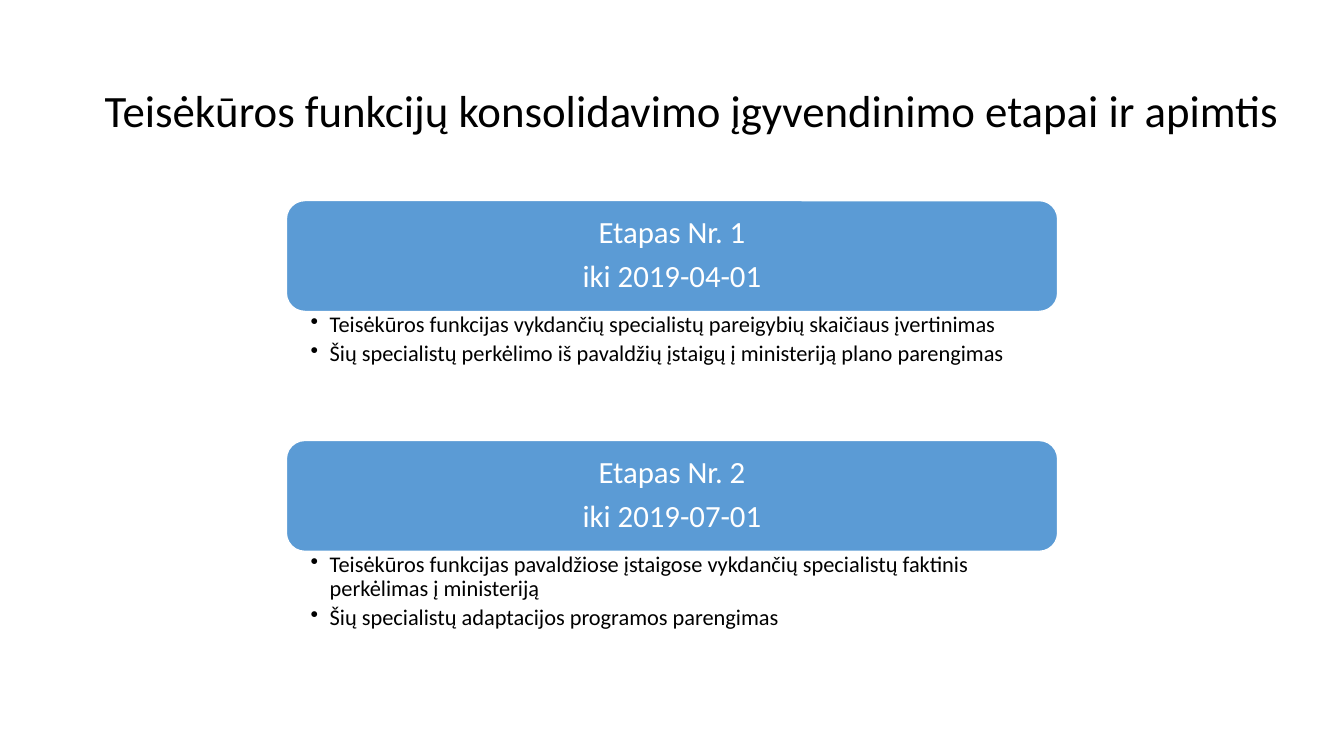
from pptx import Presentation
from pptx.dml.color import RGBColor
from pptx.enum.shapes import MSO_SHAPE as SHAPE
from pptx.enum.text import MSO_ANCHOR as ANCHOR, PP_ALIGN as ALIGN
from pptx.oxml.ns import qn
from pptx.util import Emu, Pt
from lxml.etree import SubElement

FONT = "Calibri"
COLORS = {"text": "000000", "stage": "5B9BD5", "light": "FFFFFF"}
LEFT, WIDTH, HEADER_H = 284, 765, 110
INDENT = 19

TITLE = "Teisėkūros funkcijų konsolidavimo įgyvendinimo etapai ir apimtis"
# top, heading lines, height of the task list, its alignment, tasks
STAGES = [
    (199, ["Etapas Nr. 1", "iki 2019-04-01"], 129, ALIGN.JUSTIFY, [
        "Teisėkūros funkcijas vykdančių specialistų pareigybių skaičiaus įvertinimas",
        "Šių specialistų perkėlimo iš pavaldžių įstaigų į ministeriją plano parengimas"]),
    (437, ["Etapas Nr. 2", "iki 2019-07-01"], 120, ALIGN.LEFT, [
        "Teisėkūros funkcijas pavaldžiose įstaigose vykdančių specialistų faktinis "
        "perkėlimas į ministeriją",
        "Šių specialistų adaptacijos programos parengimas"]),
]


def px(n):
    """Convert px to EMU, at 100 px to the inch."""
    return Emu(n * 9144)


def rgb(name):
    return RGBColor.from_string(COLORS[name])


def write(sp, lines, size, color, align, anchor, insets, gap=0):
    """Fill a shape with one paragraph per line; insets run left, top, right, bottom."""
    tf = sp.text_frame
    tf.word_wrap = True
    tf.vertical_anchor = anchor
    tf.margin_left, tf.margin_top, tf.margin_right, tf.margin_bottom = map(px, insets)
    tf.text = "\n".join(lines)
    for p in tf.paragraphs:
        p.alignment = align
        p.line_spacing = 0.9
        p.space_after = Pt(gap)
        font = p.runs[0].font
        font.name, font.size = FONT, Pt(size)
        font.color.rgb = rgb(color)


def add_bullet(p):
    pPr = p._p.get_or_add_pPr()
    pPr.set("marL", str(px(INDENT)))
    pPr.set("indent", str(px(-INDENT)))
    SubElement(pPr, qn("a:buChar")).set("char", "•")


def add_title(slide, text):
    sp = slide.shapes.add_textbox(px(92), px(40), px(1189), px(145))
    write(sp, [text], 32, "text", ALIGN.CENTER, ANCHOR.MIDDLE, (10, 5, 10, 5))


def add_header(slide, top, lines):
    sp = slide.shapes.add_shape(SHAPE.ROUNDED_RECTANGLE,
                                px(LEFT), px(top), px(WIDTH), px(HEADER_H))
    sp.shadow.inherit = False
    sp.fill.solid()
    sp.fill.fore_color.rgb = rgb("stage")
    sp.line.color.rgb = rgb("light")
    sp.line.width = Pt(1)
    write(sp, lines, 22, "light", ALIGN.CENTER, ANCHOR.MIDDLE, (9, 9, 9, 9), 7.7)


def add_tasks(slide, top, height, align, tasks):
    sp = slide.shapes.add_textbox(px(LEFT), px(top), px(WIDTH), px(height))
    write(sp, tasks, 16, "text", align, ANCHOR.TOP, (24, 2, 12, 2), 3.2)
    for p in sp.text_frame.paragraphs:
        add_bullet(p)


def main():
    prs = Presentation()
    prs.slide_width, prs.slide_height = px(1333), px(750)
    slide = prs.slides.add_slide(prs.slide_layouts[6])
    add_title(slide, TITLE)
    for top, heading, height, align, tasks in STAGES:
        add_header(slide, top, heading)
        add_tasks(slide, top + HEADER_H, height, align, tasks)
    prs.save("out.pptx")


if __name__ == "__main__":
    main()
